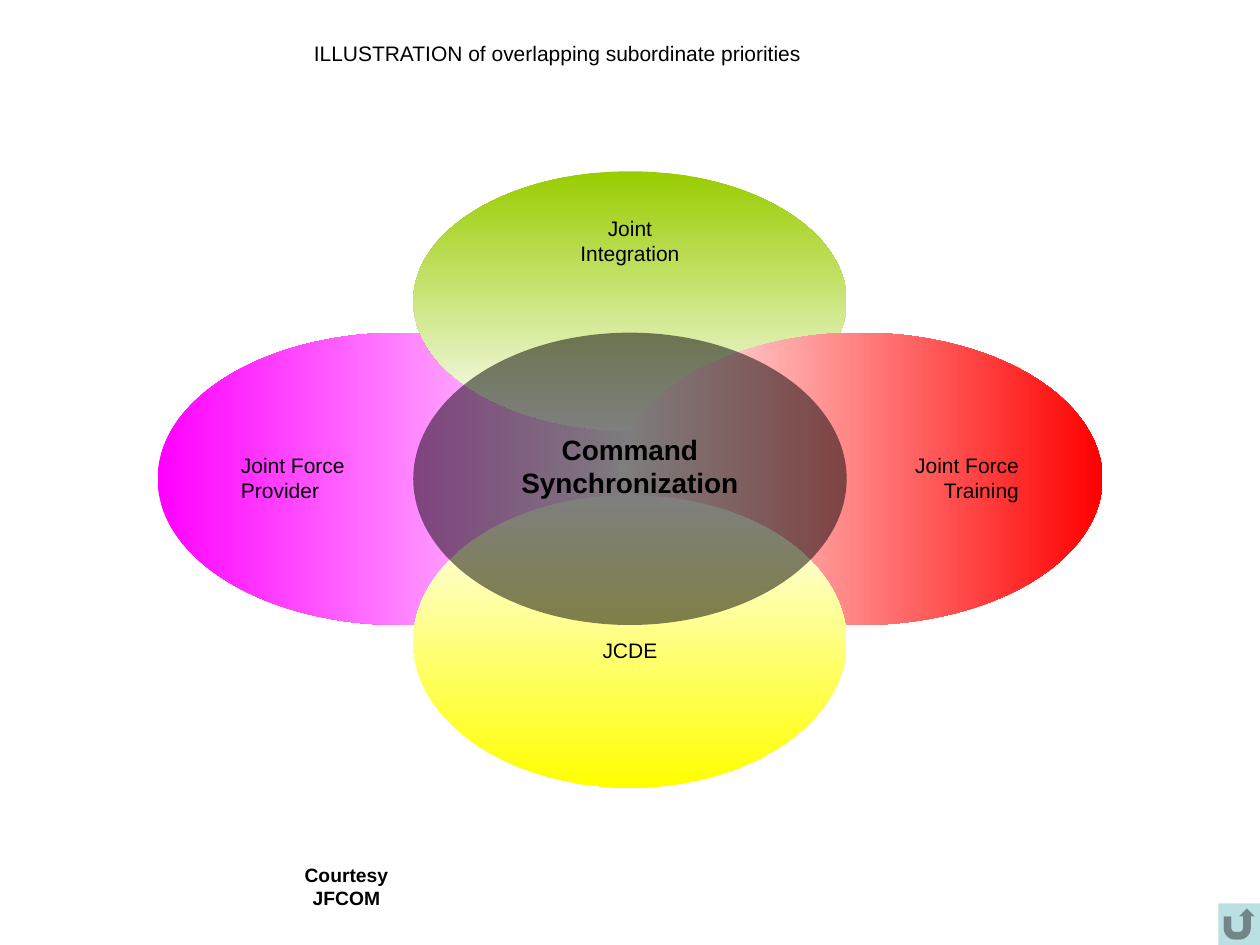
import pptx
import pptx.dml.color
import pptx.enum.shapes
import pptx.enum.text
import pptx.util

Inches = pptx.util.Inches
SHAPE = pptx.enum.shapes.MSO_SHAPE
ALIGN = pptx.enum.text.PP_ALIGN
ANCHOR = pptx.enum.text.MSO_ANCHOR

COLORS = {
    "black": "000000",
    "white": "FFFFFF",
    "pink": "FF00FF",
    "green": "99CC00",
    "red": "FF0000",
    "yellow": "FFFF00",
    "button": "BBE0E3",
}


def color(name):
    return pptx.dml.color.RGBColor.from_string(COLORS[name])


def write(shape, text, size=12, bold=False, align=ALIGN.CENTER,
          anchor=ANCHOR.TOP, wrap=True, inset=(0.1, 0.05, 0.1, 0.05)):
    """Fill a shape with one paragraph per line; inset is left, top, right, bottom."""
    frame = shape.text_frame
    frame.text = text
    frame.word_wrap = wrap
    frame.vertical_anchor = anchor
    (frame.margin_left, frame.margin_top,
     frame.margin_right, frame.margin_bottom) = map(Inches, inset)
    for para in frame.paragraphs:
        para.alignment = align
        para.font.name = "Arial"
        para.font.size = pptx.util.Pt(size)
        para.font.bold = bold
        para.font.color.rgb = color("black")


def add_shape(slide, kind, box):
    shape = slide.shapes.add_shape(kind, *map(Inches, box))
    shape.shadow.inherit = False
    shape.line.fill.background()
    return shape


def add_oval(slide, box, text, stops, angle, top, align=ALIGN.CENTER):
    """Ellipse with a two-colour gradient and its label, top inches down."""
    oval = add_shape(slide, SHAPE.OVAL, box)
    oval.fill.gradient()
    oval.fill.gradient_angle = angle
    for stop, name, place in zip(oval.fill.gradient_stops, stops, (0, 1)):
        stop.color.rgb = color(name)
        stop.position = place
    write(oval, text, align=align, inset=(0.1, top, 0.1, 0))


def add_core(slide, box):
    """Half-transparent ellipse where the priorities overlap."""
    core = add_shape(slide, SHAPE.OVAL, box)
    core.fill.solid()
    core.fill.fore_color.rgb = color("black")
    tone = core.fill._xPr.find(".//" + pptx.oxml.ns.qn("a:srgbClr"))
    alpha = pptx.oxml.parse_xml(
        f'<a:alpha {pptx.oxml.ns.nsdecls("a")} val="50000"/>')
    tone.append(alpha)
    write(core, "Command\nSynchronization", size=16, bold=True,
          inset=(0.1, 0.45, 0.1, 0))


def add_venn(slide, left, top):
    """Four overlapping ovals around a shared core."""
    wide, slim, tall, low = 3.85, 3.44, 2.32, 2.06
    mid = left + 2.03
    row = top + 1.28
    add_oval(slide, (left, row, wide, tall), "Joint Force\nProvider",
             ("pink", "white"), 0, 0.61, ALIGN.LEFT)
    add_oval(slide, (mid, top, slim, low), "Joint\nIntegration",
             ("green", "white"), 270, 0.05)
    add_oval(slide, (left + 3.65, row, wide, tall), "Joint Force\nTraining",
             ("white", "red"), 0, 0.61, ALIGN.RIGHT)
    add_oval(slide, (mid, top + 2.57, slim, tall), "JCDE",
             ("white", "yellow"), 270, 0.79)
    add_core(slide, (mid, row, slim, tall))


def add_button(slide, box):
    button = add_shape(slide, SHAPE.ACTION_BUTTON_RETURN, box)
    button.fill.solid()
    button.fill.fore_color.rgb = color("button")


def set_title(slide, box):
    title = slide.shapes.title
    title.left, title.top, title.width, title.height = map(Inches, box)
    write(title, "ILLUSTRATION of overlapping subordinate priorities",
          anchor=ANCHOR.MIDDLE, wrap=False, inset=(0, 0, 0, 0))


def add_credit(slide, box):
    credit = slide.shapes.add_textbox(*map(Inches, box))
    write(credit, "Courtesy JFCOM", size=11, bold=True, wrap=False)


def main():
    deck = pptx.Presentation()
    deck.slide_width, deck.slide_height = Inches(10), Inches(7.5)
    slide = deck.slides.add_slide(deck.slide_layouts[5])
    add_venn(slide, 1.25, 1.36)
    add_button(slide, (9.67, 7.17, 0.33, 0.33))
    set_title(slide, (2.49, 0.32, 3.87, 0.2))
    add_credit(slide, (2.03, 6.8, 1.44, 0.28))
    deck.save("out.pptx")


if __name__ == "__main__":
    main()
